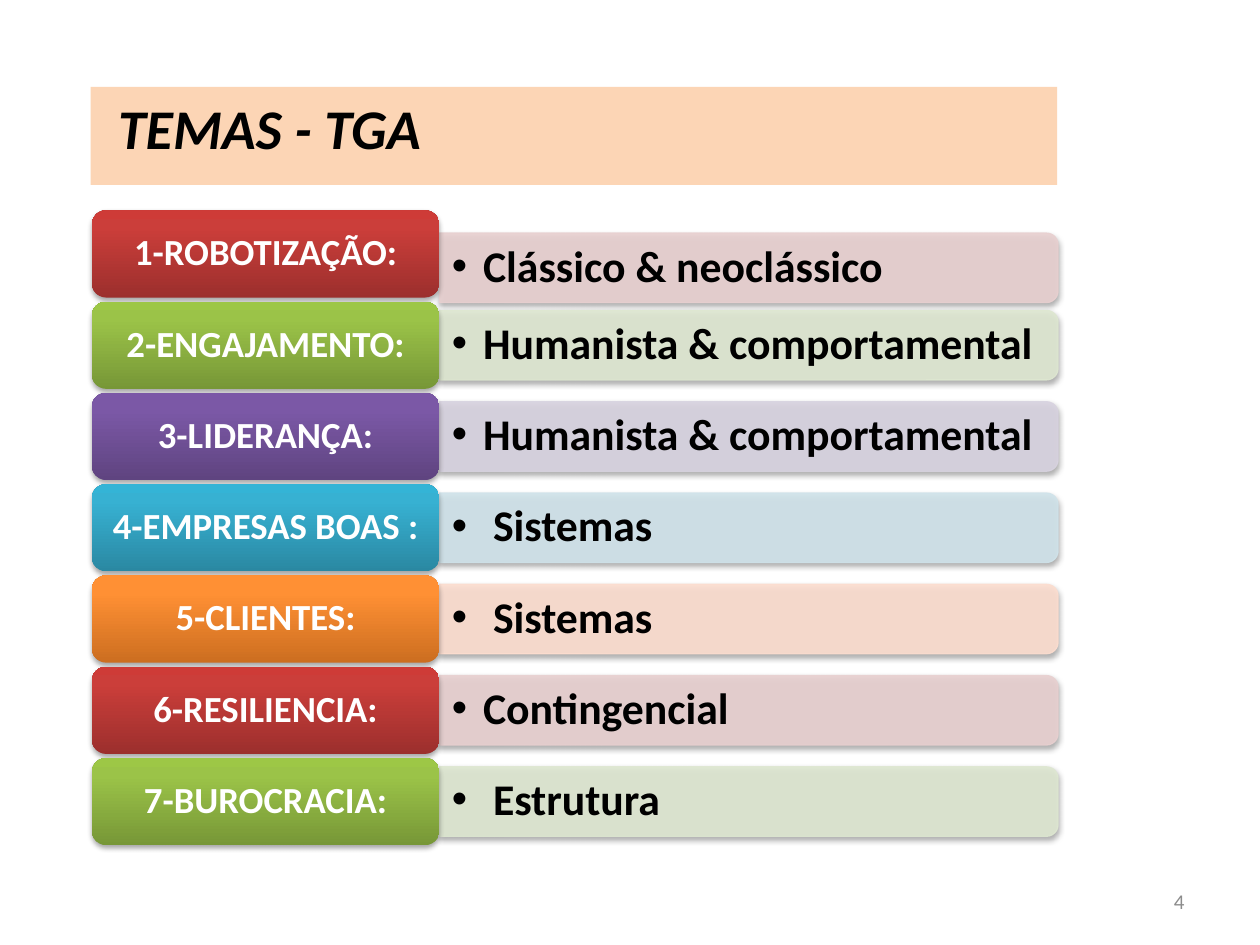
from copy import deepcopy

from pptx import Presentation
from pptx.dml.color import RGBColor
from pptx.enum.shapes import MSO_SHAPE as SHAPE
from pptx.enum.text import MSO_ANCHOR as ANCHOR, PP_ALIGN as ALIGN
from pptx.oxml import parse_xml
from pptx.oxml.ns import nsdecls, qn
from pptx.util import Cm, Pt

RED = ("9C2F2D", "CB3E3A", "CE3B37", "E8D0D0")
GREEN = ("779737", "9BC348", "9DC746", "DEE7D1")
PURPLE = ("5F4480", "7B58A6", "7C57A8", "D8D3E0")
BLUE = ("2A88A2", "37B1D2", "34B4D6", "D0E3EA")
ORANGE = ("CC6E20", "FF9034", "FF9136", "FCDDCF")
THEMES = [
    ("1-ROBOTIZAÇÃO:", "Clássico & neoclássico", RED),
    ("2-ENGAJAMENTO:", "Humanista & comportamental", GREEN),
    ("3-LIDERANÇA:", "Humanista & comportamental", PURPLE),
    ("4-EMPRESAS BOAS :", " Sistemas", BLUE),
    ("5-CLIENTES:", " Sistemas", ORANGE),
    ("6-RESILIENCIA:", "Contingencial", RED),
    ("7-BUROCRACIA:", " Estrutura", GREEN),
]
LEFT, TOP, PITCH = 1.85, 4.24, 1.84
LABEL_W, LABEL_H = 7.01, 1.76
BAR_W, BAR_H = 12.47, 1.4
FIRST_BAR_DROP = 0.28


def rgb(value):
    """Turn a hex string into a colour."""
    return RGBColor.from_string(value)


def write(sp, text, size, color="000000", bold=True, italic=False, align=ALIGN.LEFT,
          anchor=ANCHOR.MIDDLE, inset=(0.25, 0.13), spacing=None, indent=0, bullet=False):
    """Put one formatted paragraph into a shape."""
    tf = sp.text_frame
    tf.word_wrap, tf.vertical_anchor = True, anchor
    tf.margin_left = tf.margin_right = Cm(inset[0])
    tf.margin_top = tf.margin_bottom = Cm(inset[1])
    p = tf.paragraphs[0]
    pPr = p._p.get_or_add_pPr()
    pPr.set("marL", str(Cm(indent)))
    if bullet:
        pPr.set("indent", str(-Cm(indent)))
        pPr.append(parse_xml(f'<a:buFont {nsdecls("a")} typeface="Arial"/>'))
        pPr.append(parse_xml(f'<a:buChar {nsdecls("a")} char="•"/>'))
    p.alignment, p.line_spacing = align, spacing
    r = p.add_run()
    r.text = text
    r.font.name, r.font.size = "Calibri", Pt(size)
    r.font.bold, r.font.italic = bold, italic
    r.font.color.rgb = rgb(color)


def add_box(s, kind, x, y, w, h):
    """Add a preset shape without line or shadow."""
    sp = s.shapes.add_shape(kind, Cm(x), Cm(y), Cm(w), Cm(h))
    sp.shadow.inherit = False
    sp.line.fill.background()
    return sp


def add_shadow(sp):
    """Give a shape a soft shadow below it."""
    effects = sp._element.spPr.find(qn("a:effectLst"))
    effects.append(parse_xml(
        f'<a:outerShdw {nsdecls("a")} blurRad="40000" dist="23000" dir="5400000" '
        'rotWithShape="0"><a:srgbClr val="000000"><a:alpha val="35000"/></a:srgbClr>'
        '</a:outerShdw>'))


def add_bar(s, text, center_y, color):
    """Add a translucent bar rounded on the right, with its bulleted text."""
    x = LEFT + LABEL_W
    sp = add_box(s, SHAPE.ROUND_2_SAME_RECTANGLE, x + (BAR_W - BAR_H) / 2,
                 center_y - BAR_W / 2, BAR_H, BAR_W)
    sp.rotation = 90
    for fill in (sp.fill, sp.line.fill):
        fill.solid()
        fill.fore_color.rgb = rgb(color)
    sp.line.width = Pt(0.75)
    for clr in sp._element.spPr.iter(qn("a:srgbClr")):
        clr.append(parse_xml(f'<a:alpha {nsdecls("a")} val="90000"/>'))
    add_shadow(sp)
    box = s.shapes.add_textbox(Cm(x), Cm(center_y - 0.64), Cm(12.4), Cm(1.28))
    write(box, text, 25, spacing=0.9, indent=0.63, bullet=True)


def add_label(s, text, y, colors):
    """Add a rounded label with a vertical gradient."""
    sp = add_box(s, SHAPE.ROUNDED_RECTANGLE, LEFT, y, LABEL_W, LABEL_H)
    sp.fill.gradient()
    sp.fill.gradient_angle = 90
    stops = sp._element.spPr.find(".//" + qn("a:gsLst"))
    stops.append(deepcopy(stops[0]))
    for stop, position, color in zip(sp.fill.gradient_stops, (0, 0.8, 1), colors):
        stop.position = position
        stop.color.rgb = rgb(color)
    add_shadow(sp)
    write(sp, text, 21, color="FFFFFF", align=ALIGN.CENTER, inset=(0.3, 0.2), spacing=0.9)


def add_title(s, text):
    """Add the title band."""
    sp = add_box(s, SHAPE.RECTANGLE, 1.83, 1.75, 19.48, 1.98)
    sp.fill.solid()
    sp.fill.fore_color.rgb = rgb("FCD5B5")
    write(sp, text, 32, italic=True, anchor=ANCHOR.TOP, indent=0.3)


def add_page_number(s, text):
    """Add the page number at the bottom right."""
    box = s.shapes.add_textbox(Cm(18.2), Cm(17.65), Cm(5.93), Cm(1.02))
    write(box, text, 12, color="8C8C8C", bold=False, align=ALIGN.RIGHT)


def main():
    """Build the slide and save it."""
    prs = Presentation()
    prs.slide_width, prs.slide_height = Cm(25.4), Cm(19.05)
    s = prs.slides.add_slide(prs.slide_layouts[6])
    add_page_number(s, "4")
    add_title(s, "TEMAS - TGA")
    for i, (label, school, (*gradient, tint)) in enumerate(THEMES):
        y = TOP + i * PITCH
        drop = FIRST_BAR_DROP if i == 0 else 0
        add_bar(s, school, y + LABEL_H / 2 + drop, tint)
        add_label(s, label, y, gradient)
    prs.save("out.pptx")


if __name__ == "__main__":
    main()
